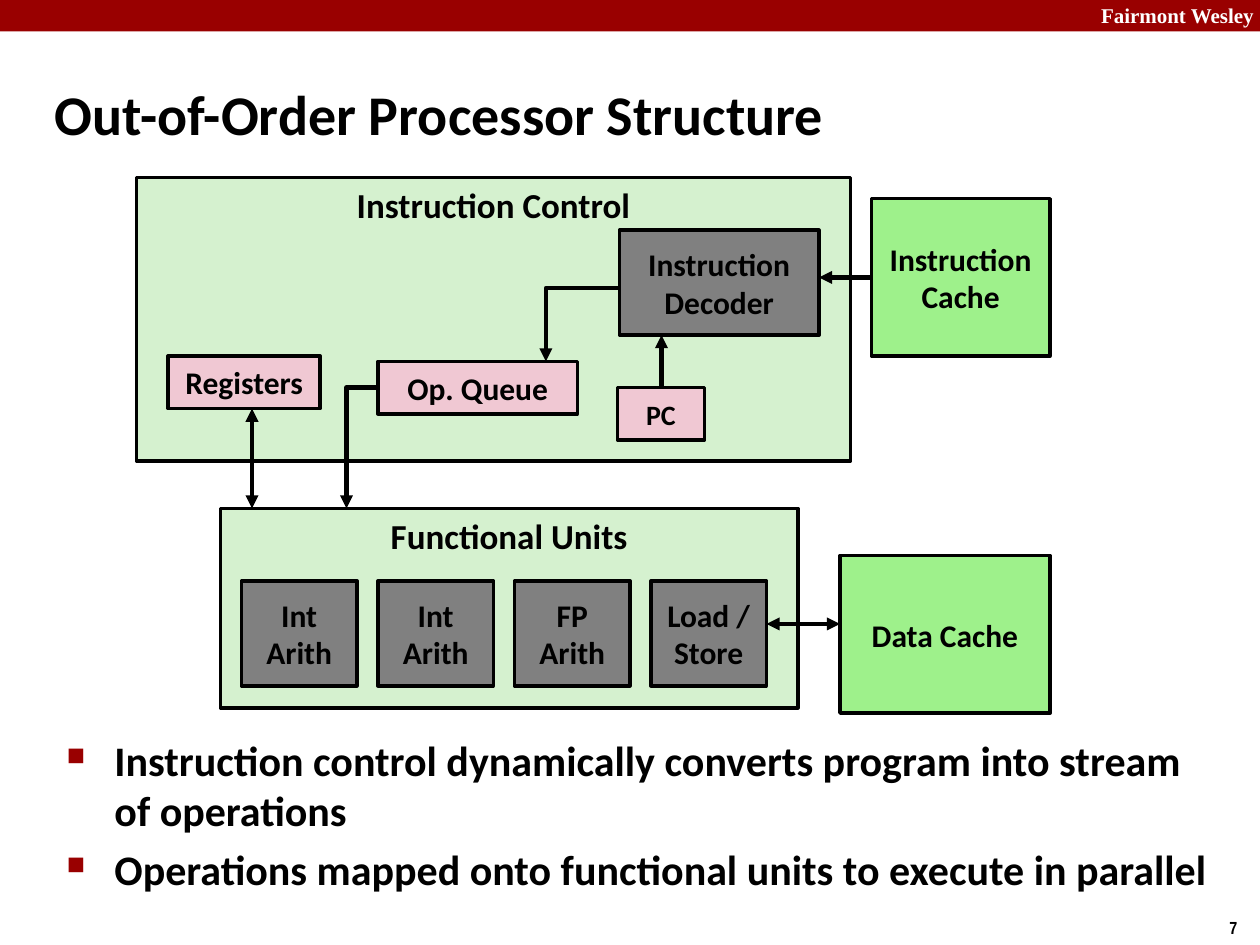
from lxml.etree import SubElement
from pptx import Presentation
from pptx.dml.color import RGBColor
from pptx.enum.shapes import MSO_CONNECTOR as Link, MSO_SHAPE as Shape
from pptx.enum.text import MSO_ANCHOR as Anchor, MSO_AUTO_SIZE as Fit, PP_ALIGN as Align
from pptx.oxml.ns import qn
from pptx.util import Inches, Pt

BLACK = RGBColor(0x00, 0x00, 0x00)
WHITE = RGBColor(0xFF, 0xFF, 0xFF)
RED = RGBColor(0x99, 0x00, 0x00)
PALE_GREEN = RGBColor(0xD5, 0xF1, 0xCF)
GREEN = RGBColor(0x9E, 0xF1, 0x8B)
GRAY = RGBColor(0x80, 0x80, 0x80)
PINK = RGBColor(0xF0, 0xC8, 0xD3)

TITLE = "Out-of-Order Processor Structure"
BRAND = "Fairmont Wesley"
PAGE_NUMBER = "7"
BULLETS = [
    "Instruction control dynamically converts program into stream of operations",
    "Operations mapped onto functional units to execute in parallel",
]

CELL = 1 / 12
TOP = 1.41
UNITS = ["Int\nArith", "Int\nArith", "FP\nArith", "Load /\nStore"]
UNIT_LEFT, UNIT_STEP, UNIT_TOP = 23, 13, 38.4

PANELS = [
    ("Functional Units", 21, 31.5, 55, 19),
    ("Instruction Control", 13, 0, 68, 27),
]
BLOCKS = [
    ("Registers", 16, 17, 14.5, 5, PINK, 18),
    ("Instruction Decoder", 59, 5, 19, 10, GRAY, 18),
    ("Op. Queue", 36, 17.5, 19, 5, PINK, 18),
    ("Data Cache", 80, 36, 20, 15, GREEN, 18),
    ("Instruction\nCache", 83, 2, 17, 15, GREEN, 18),
    ("PC", 58.8, 20, 8.3, 5, PINK, 16),
] + [
    (name, UNIT_LEFT + UNIT_STEP * i, UNIT_TOP, 11, 10, GRAY, 18)
    for i, name in enumerate(UNITS)
]
ARROWS = [
    ((80, 42.5), (73, 42.5), True),
    ((83, 9.5), (78, 9.5), False),
    ((36, 20), (33, 31.5), False),
    ((24, 22), (24, 31.5), True),
    ((59, 10.5), (52, 17.5), False),
    ((63, 20), (63, 15), False),
]


def grid_x(column):
    return Inches(column * CELL)


def grid_y(row):
    return Inches(TOP + row * CELL)


def add_span(para, text, size, color=BLACK, font="Calibri"):
    span = para.add_run()
    span.text = text
    span.font.name = font
    span.font.size = Pt(size)
    span.font.bold = True
    span.font.color.rgb = color


def write_lines(frame, lines, size, align=Align.LEFT, **style):
    for i, line in enumerate(lines):
        para = frame.add_paragraph() if i else frame.paragraphs[0]
        para.alignment = align
        add_span(para, line, size, **style)


def add_text(page, lines, place, size, wrap=True, **style):
    frame = page.shapes.add_textbox(*map(Inches, place)).text_frame
    frame.word_wrap = wrap
    write_lines(frame, lines, size, **style)
    return frame


def add_rect(page, left, top, width, height, color):
    box = page.shapes.add_shape(Shape.RECTANGLE, left, top, width, height)
    box.shadow.inherit = False
    box.fill.solid()
    box.fill.fore_color.rgb = color
    return box


def add_block(page, text, column, row, columns, rows, color, size, anchor=Anchor.MIDDLE):
    box = add_rect(page, grid_x(column), grid_y(row), Inches(columns * CELL), Inches(rows * CELL), color)
    box.line.color.rgb = BLACK
    box.line.width = Pt(2)
    box.text_frame.word_wrap = True
    box.text_frame.vertical_anchor = anchor
    write_lines(box.text_frame, text.split("\n"), size, Align.CENTER)


def add_arrow(page, start, end, both_ends):
    bent = start[0] != end[0] and start[1] != end[1]
    arrow = page.shapes.add_connector(
        Link.ELBOW if bent else Link.STRAIGHT,
        grid_x(start[0]), grid_y(start[1]), grid_x(end[0]), grid_y(end[1]),
    )
    arrow.line.color.rgb = BLACK
    arrow.line.width = Pt(2.5)
    props = arrow.element.spPr
    if bent:
        props.find(qn("a:prstGeom")).set("prst", "bentConnector2")
    outline = props.find(qn("a:ln"))
    for tag in ["a:headEnd", "a:tailEnd"] if both_ends else ["a:tailEnd"]:
        SubElement(outline, qn(tag), type="triangle")
    SubElement(props, qn("a:effectLst"))


def add_bullet(para):
    para.space_before = Pt(4.8)
    props = para._p.get_or_add_pPr()
    props.set("marL", str(Inches(0.38)))
    props.set("indent", str(-Inches(0.38)))
    color = SubElement(props, qn("a:buClr"))
    SubElement(color, qn("a:srgbClr"), val=str(RED))
    SubElement(props, qn("a:buSzPct"), val="60000")
    SubElement(props, qn("a:buChar"), char="■")


def main():
    deck = Presentation()
    deck.slide_width, deck.slide_height = Inches(10), Inches(7.5)
    page = deck.slides.add_slide(deck.slide_layouts[5])

    banner = add_rect(page, 0, 0, deck.slide_width, Inches(0.25), RED)
    banner.line.fill.background()
    add_text(page, [BRAND], (8.64, -0.03, 1.43, 0.3), 12, color=WHITE, font="Times New Roman")
    add_text(page, [PAGE_NUMBER], (9.66, 7.23, 0.34, 0.27), 10, wrap=False, font="Arial Narrow")

    title = page.shapes.title
    title.left, title.top, title.width, title.height = map(Inches, (0.33, 0.48, 9.67, 0.83))
    title.text_frame.auto_size = Fit.NONE
    title.text_frame.vertical_anchor = Anchor.MIDDLE
    write_lines(title.text_frame, [TITLE], 32)

    body = add_text(page, BULLETS, (0.43, 5.78, 9.32, 1.34), 24)
    for para in body.paragraphs:
        add_bullet(para)

    for panel in PANELS:
        add_block(page, *panel, PALE_GREEN, 20, Anchor.TOP)
    for block in BLOCKS:
        add_block(page, *block)
    for arrow in ARROWS:
        add_arrow(page, *arrow)

    deck.save("out.pptx")


if __name__ == "__main__":
    main()
